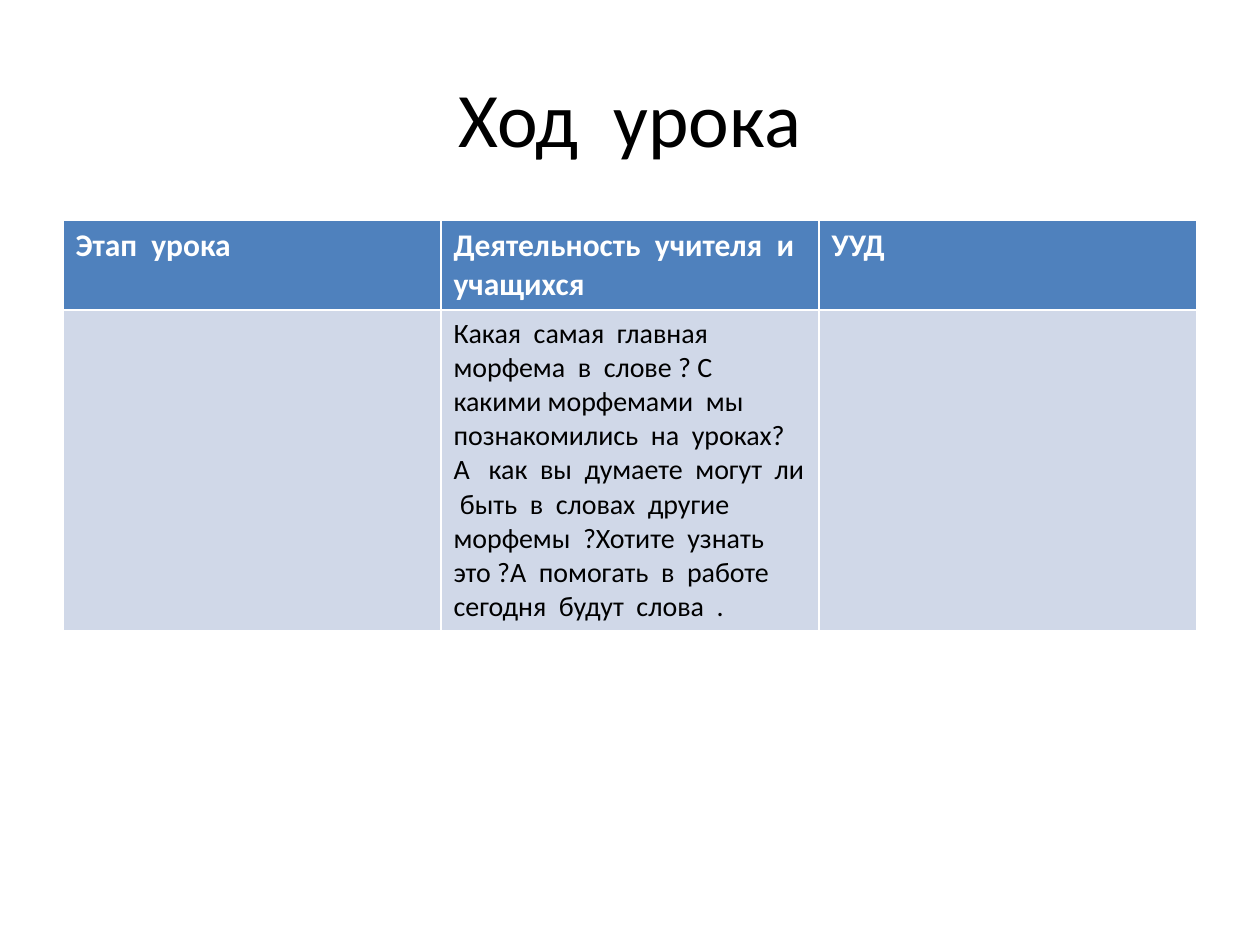
from dataclasses import dataclass

import pptx
import pptx.dml.color
import pptx.enum.text
import pptx.util

Pt = pptx.util.Pt
RGBColor = pptx.dml.color.RGBColor
PP_ALIGN = pptx.enum.text.PP_ALIGN

WHITE = RGBColor(0xFF, 0xFF, 0xFF)
BLACK = RGBColor(0, 0, 0)
HEADER_BLUE = RGBColor(0x4F, 0x81, 0xBD)
BODY_BLUE = RGBColor(0xD0, 0xD8, 0xE8)
FONT = "Calibri"


@dataclass(frozen=True)
class Row:
    texts: tuple[str, ...]
    height: float
    size: float
    color: RGBColor
    fill: RGBColor
    bold: bool = False


ROWS = (
    Row(("Этап  урока", "Деятельность  учителя  и  учащихся", "УУД"),
        51, 18, WHITE, HEADER_BLUE, bold=True),
    Row(("",
         "Какая  самая  главная  морфема  в  слове ? С  какими морфемами  мы  "
         "познакомились  на  уроках? А   как  вы  думаете  могут  ли  быть  в  "
         "словах  другие  морфемы  ?Хотите  узнать  это ?А  помогать  в  работе  "
         "сегодня  будут  слова  .",
         ""),
        182, 16, BLACK, BODY_BLUE),
)


def set_text(tf, text: str, *, size: float, color: RGBColor,
             bold: bool = False, align=PP_ALIGN.LEFT) -> None:
    p = tf.paragraphs[0]
    p.alignment = align
    r = p.add_run()
    r.text = text
    r.font.name = FONT
    r.font.size = Pt(size)
    r.font.bold = bold
    r.font.color.rgb = color


def add_title(s, text: str) -> None:
    sp = s.shapes.title
    sp.left, sp.top, sp.width, sp.height = Pt(36), Pt(21.6), Pt(648), Pt(90)
    sp.text_frame.vertical_anchor = pptx.enum.text.MSO_ANCHOR.MIDDLE
    set_text(sp.text_frame, text, size=44, color=BLACK, align=PP_ALIGN.CENTER)


def add_lesson_table(s, rows: tuple[Row, ...]) -> None:
    height = sum(row.height for row in rows)
    table = s.shapes.add_table(len(rows), len(rows[0].texts),
                               Pt(36), Pt(126), Pt(648), Pt(height)).table
    for i, row in enumerate(rows):
        table.rows[i].height = Pt(row.height)
        for cell, text in zip(table.rows[i].cells, row.texts):
            cell.fill.solid()
            cell.fill.fore_color.rgb = row.fill
            if text:
                set_text(cell.text_frame, text, size=row.size,
                         color=row.color, bold=row.bold)


def main() -> None:
    prs = pptx.Presentation()
    prs.slide_width, prs.slide_height = Pt(720), Pt(540)
    s = prs.slides.add_slide(prs.slide_layouts[5])
    add_title(s, "Ход  урока")
    add_lesson_table(s, ROWS)
    prs.save("out.pptx")


if __name__ == "__main__":
    main()
